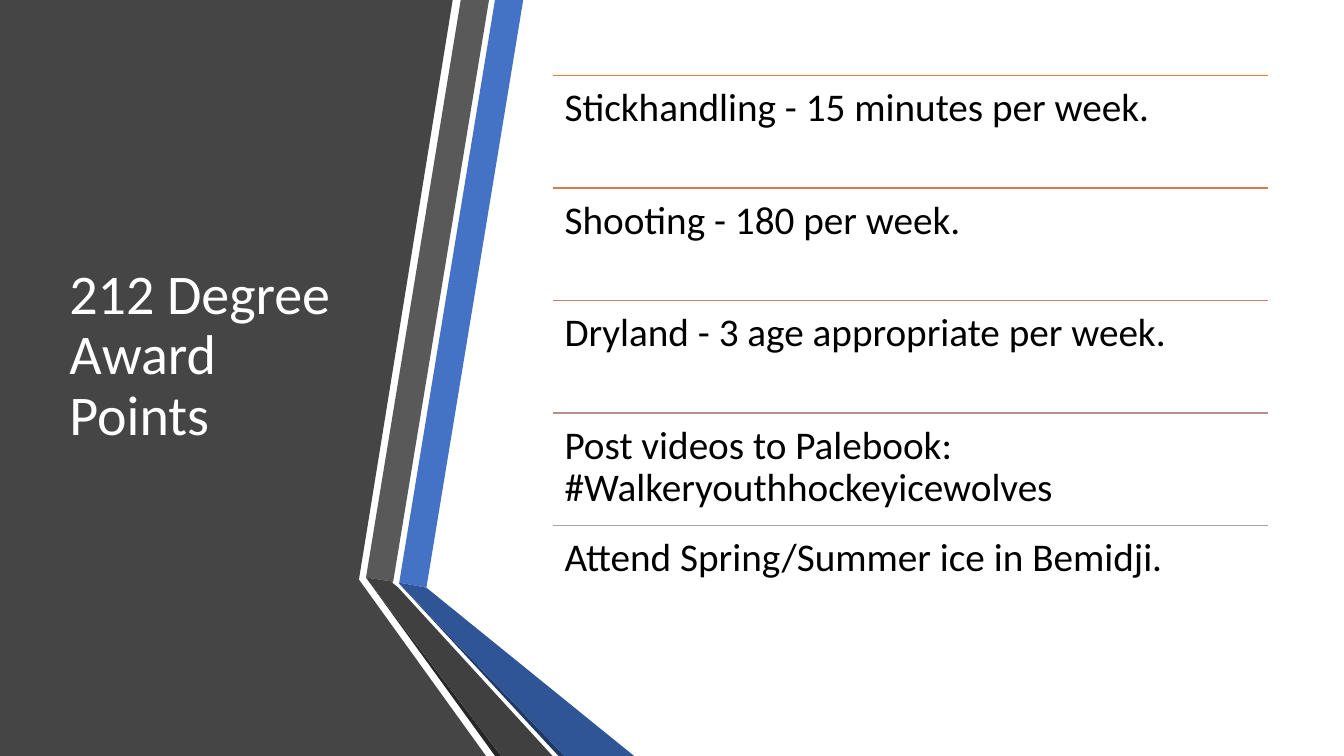
from lxml import etree
from pptx import Presentation
from pptx.dml.color import RGBColor
from pptx.enum.shapes import MSO_CONNECTOR
from pptx.enum.text import MSO_ANCHOR, PP_ALIGN
from pptx.oxml.ns import qn
from pptx.util import Inches, Pt

STRAIGHT = MSO_CONNECTOR.STRAIGHT
TOP = MSO_ANCHOR.TOP
MIDDLE = MSO_ANCHOR.MIDDLE
LEFT = PP_ALIGN.LEFT

# Fill and outline of each part of the folded ribbon, back to front
RIBBON = [
    ("454545", [(0, 0), (3.53, 0), (4.49, 0), (3.56, 5.75), (4.82, 7.5), (0, 7.5)]),
    ("4472C4", [(3.96, 5.78), (4.23, 5.83), (5.19, 0), (4.91, 0)]),
    ("595959", [(4.85, 0), (4.57, 0), (3.63, 5.73), (3.9, 5.77)]),
    ("262626", [(3.63, 5.73), (4.91, 7.5), (4.97, 7.5)]),
    ("203864", [(3.96, 5.79), (5.54, 7.5), (5.6, 7.5)]),
    ("2F5597", [(3.96, 5.79), (5.6, 7.5), (6.29, 7.5), (4.23, 5.83), (3.96, 5.78)]),
    ("404040", [(5.48, 7.5), (3.95, 5.83), (3.89, 5.78), (3.9, 5.77),
                (3.63, 5.73), (4.97, 7.5)]),
]

# Text and rule colour of each award point
AWARD_POINTS = [
    ("Stickhandling - 15 minutes per week.", "ED7D31"),
    ("Shooting - 180 per week.", "D87A51"),
    ("Dryland - 3 age appropriate per week.", "C48170"),
    ("Post videos to Palebook: #Walkeryouthhockeyicewolves", "B4908B"),
    ("Attend Spring/Summer ice in Bemidji.", "A5A5A5"),
]
LIST_LEFT, LIST_TOP, LIST_WIDTH = 5.48, 0.75, 7.1
LIST_HEIGHT = 5.58
ROW_HEIGHT = LIST_HEIGHT / len(AWARD_POINTS)


def color(hex_value):
    return RGBColor.from_string(hex_value)


class SlideBuilder:
    font = "Calibri"
    line_spacing = 0.9

    def __init__(self, slide):
        self.slide = slide

    def polygon(self, points, fill):
        corners = [(Inches(x), Inches(y)) for x, y in points]
        builder = self.slide.shapes.build_freeform(*corners[0])
        builder.add_line_segments(corners[1:], close=True)
        shape = builder.convert_to_shape()
        shape.shadow.inherit = False
        shape.fill.solid()
        shape.fill.fore_color.rgb = color(fill)
        shape.line.fill.background()

    def rule(self, left, top, width, line_color):
        """Draw a thin horizontal line."""
        connector = self.slide.shapes.add_connector(
            STRAIGHT, Inches(left), Inches(top), Inches(left + width), Inches(top))
        connector.line.color.rgb = color(line_color)
        connector.line.width = Pt(1)
        properties = connector._element.spPr
        etree.SubElement(properties, qn("a:effectLst"))

    def text(self, content, box, size, text_color, anchor=TOP, insets=(0.1, 0.05)):
        """Add wrapped text; insets are horizontal, then vertical."""
        shape = self.slide.shapes.add_textbox(*(Inches(length) for length in box))
        frame = shape.text_frame
        frame.word_wrap = True
        frame.vertical_anchor = anchor
        frame.margin_left = frame.margin_right = Inches(insets[0])
        frame.margin_top = frame.margin_bottom = Inches(insets[1])
        paragraph = frame.paragraphs[0]
        paragraph.alignment = LEFT
        paragraph.line_spacing = self.line_spacing
        run = paragraph.add_run()
        run.text = content
        run.font.name = self.font
        run.font.size = Pt(size)
        run.font.color.rgb = color(text_color)


def main():
    presentation = Presentation()
    presentation.slide_width = Inches(13.33)
    presentation.slide_height = Inches(7.5)
    blank_layout = presentation.slide_layouts[6]
    builder = SlideBuilder(presentation.slides.add_slide(blank_layout))

    for fill, points in RIBBON:
        builder.polygon(points, fill)

    builder.text("212 Degree Award Points", (0.59, LIST_TOP, 3.04, LIST_HEIGHT),
                 40, "FFFFFF", anchor=MIDDLE)

    for index, (content, line_color) in enumerate(AWARD_POINTS):
        top = LIST_TOP + index * ROW_HEIGHT
        builder.rule(LIST_LEFT, top, LIST_WIDTH, line_color)
        builder.text(content, (LIST_LEFT, top, LIST_WIDTH, ROW_HEIGHT),
                     28, "000000", insets=(0.12, 0.12))

    presentation.save("out.pptx")


if __name__ == "__main__":
    main()
